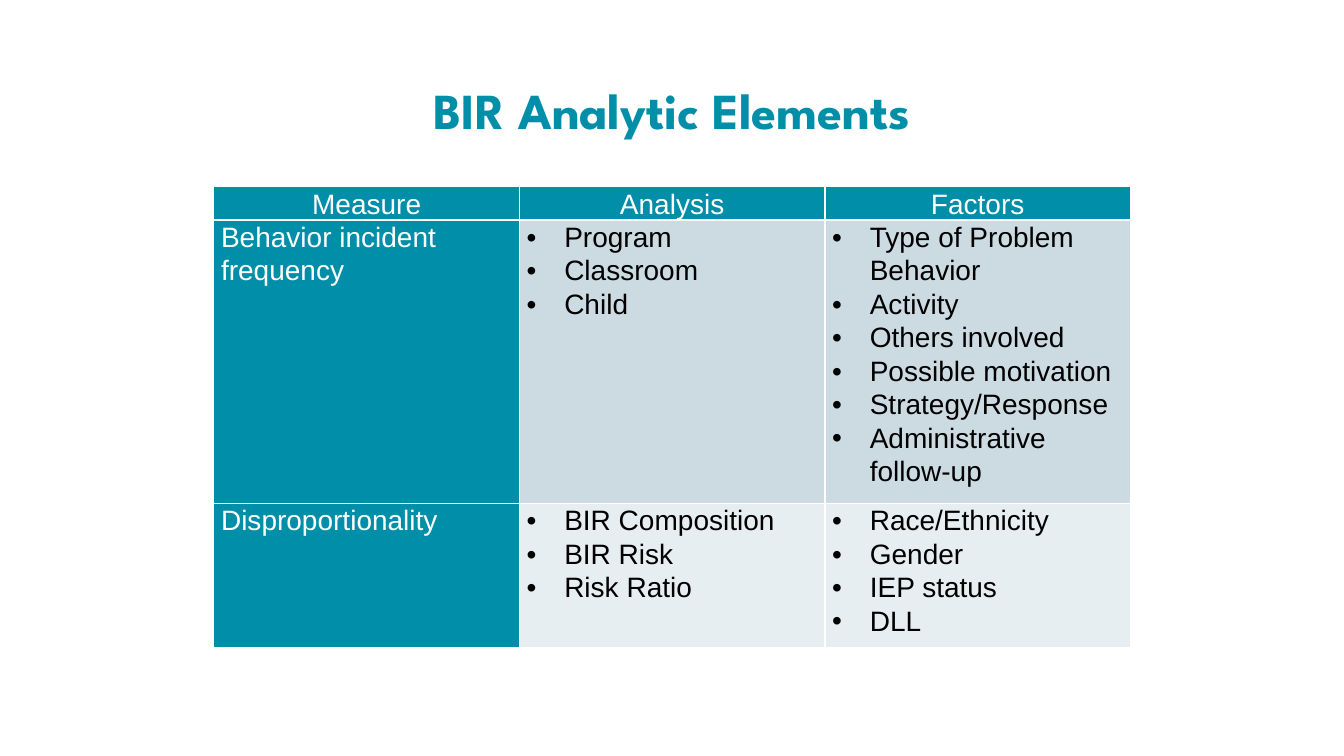
from dataclasses import dataclass

from lxml.etree import SubElement
from pptx import Presentation
from pptx.dml.color import RGBColor as Color
from pptx.enum.text import MSO_ANCHOR as Anchor, PP_ALIGN as Align
from pptx.oxml.ns import qn
from pptx.util import Cm, Pt

TITLE = "BIR Analytic Elements"
HEADINGS = ["Measure", "Analysis", "Factors"]
MEASURES = [
    (
        "Behavior incident frequency",
        ["Program", "Classroom", "Child"],
        ["Type of Problem Behavior", "Activity", "Others involved",
         "Possible motivation", "Strategy/Response", "Administrative follow-up"],
    ),
    (
        "Disproportionality",
        ["BIR Composition", "BIR Risk", "Risk Ratio"],
        ["Race/Ethnicity", "Gender", "IEP status", "DLL"],
    ),
]
ROW_HEIGHTS = [Cm(0.83), Cm(7.14), Cm(3.63)]
COLUMN_WIDTH = Cm(7.7)


@dataclass(frozen=True)
class Theme:
    """Colours, fonts and type sizes of the slide."""
    teal: str = "008EA9"
    white: str = "FFFFFF"
    black: str = "000000"
    bands: tuple = ("CCDBE2", "E7EEF1")
    title_font: str = "League Spartan"
    body_font: str = "Arial"
    title_size: int = 36
    body_size: int = 20


THEME = Theme()


def style_para(para, font, size, color, spacing, align, bold=False):
    """Format a paragraph and its runs."""
    para.alignment = align
    para.line_spacing = spacing
    for span in para.runs:
        span.font.name = font
        span.font.size = Pt(size)
        span.font.bold = bold
        span.font.color.rgb = Color.from_string(color)


def add_bullet(para):
    """Give a paragraph a hanging round bullet."""
    properties = para._p.get_or_add_pPr()
    properties.set("marL", str(Cm(0.95)))
    properties.set("indent", str(-Cm(0.95)))
    SubElement(properties, qn("a:buFont"), typeface="Arial")
    SubElement(properties, qn("a:buChar"), char="•")


def add_borders(cell):
    """Draw a thin white line on each side of a cell."""
    properties = cell._tc.get_or_add_tcPr()
    for position, side in enumerate(["lnL", "lnR", "lnT", "lnB"]):
        line = SubElement(properties, qn(f"a:{side}"), w=str(Pt(1)))
        fill = SubElement(line, qn("a:solidFill"))
        SubElement(fill, qn("a:srgbClr"), val=THEME.white)
        properties.insert(position, line)


def fill_cell(cell, content, fill, color, align=Align.LEFT):
    """Write a plain text or a bulleted list into a cell."""
    bulleted = isinstance(content, list)
    cell.text_frame.text = "\n".join(content) if bulleted else content
    cell.margin_left = cell.margin_right = Cm(0.18)
    cell.margin_top = cell.margin_bottom = 0
    cell.fill.solid()
    cell.fill.fore_color.rgb = Color.from_string(fill)
    add_borders(cell)
    for para in cell.text_frame.paragraphs:
        style_para(para, THEME.body_font, THEME.body_size, color, 1.07, align)
        if bulleted:
            add_bullet(para)


def add_title(page):
    """Place and format the slide title."""
    title = page.shapes.title
    title.left, title.top, title.width, title.height = Cm(2.33), Cm(1.01), Cm(29.21), Cm(3.68)
    title.text_frame.text = TITLE
    title.text_frame.vertical_anchor = Anchor.MIDDLE
    style_para(title.text_frame.paragraphs[0], THEME.title_font, THEME.title_size,
               THEME.teal, 0.9, Align.CENTER, bold=True)


def add_measures(page):
    """Add the table of measures, analyses and factors."""
    table = page.shapes.add_table(
        len(ROW_HEIGHTS), len(HEADINGS), Cm(5.39), Cm(4.7),
        COLUMN_WIDTH * len(HEADINGS), sum(ROW_HEIGHTS)).table
    for row, height in zip(table.rows, ROW_HEIGHTS):
        row.height = height
    for column, heading in enumerate(HEADINGS):
        table.columns[column].width = COLUMN_WIDTH
        fill_cell(table.cell(0, column), heading, THEME.teal, THEME.white, Align.CENTER)
    for row, (measure, band) in enumerate(zip(MEASURES, THEME.bands), start=1):
        name, *lists = measure
        fill_cell(table.cell(row, 0), name, THEME.teal, THEME.white)
        for column, items in enumerate(lists, start=1):
            fill_cell(table.cell(row, column), items, band, THEME.black)


def main():
    """Build the slide and save it."""
    deck = Presentation()
    deck.slide_width, deck.slide_height = Cm(33.87), Cm(19.05)
    page = deck.slides.add_slide(deck.slide_layouts[5])
    add_title(page)
    add_measures(page)
    deck.save("out.pptx")


if __name__ == "__main__":
    main()
